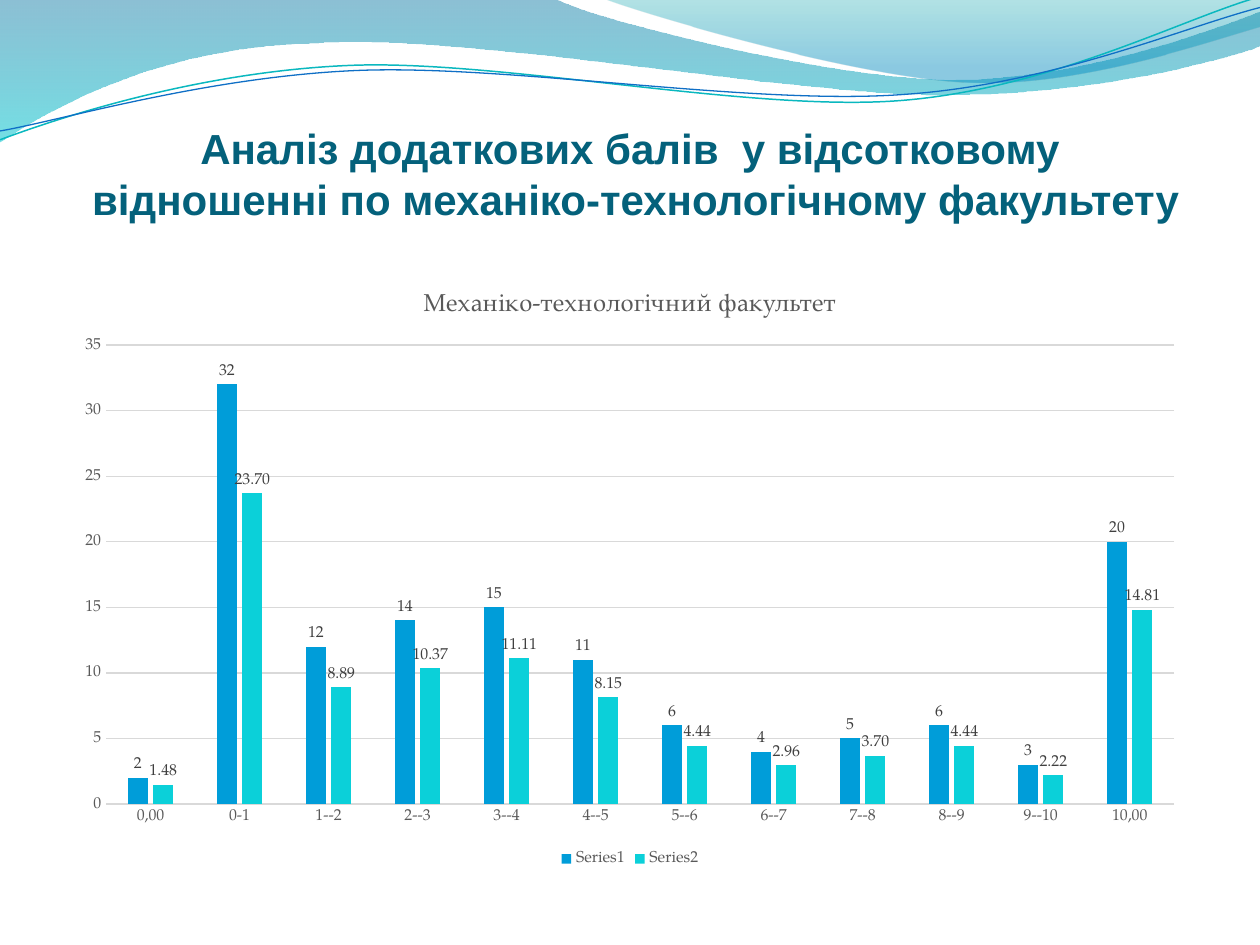
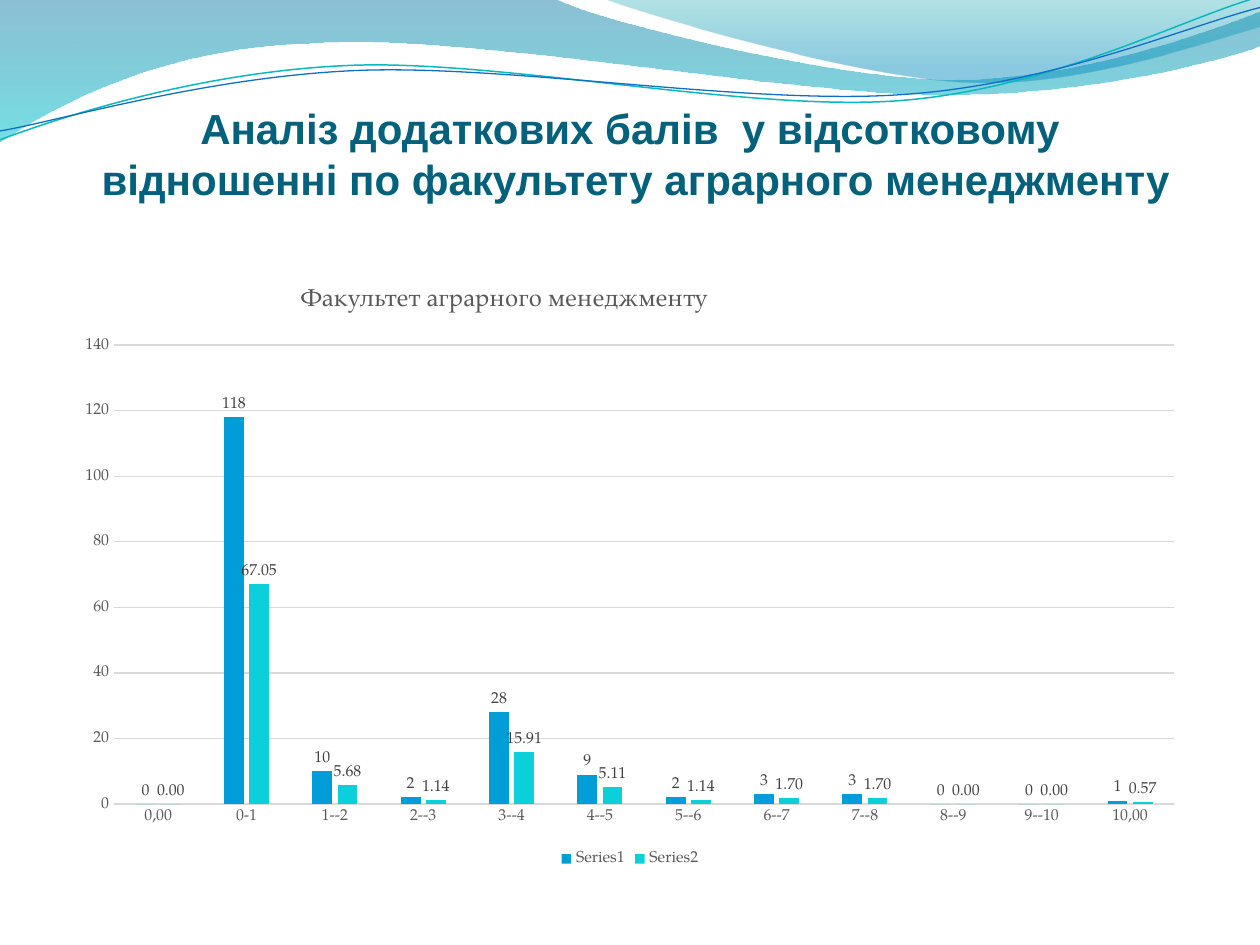
from math import cos, radians, sin

from lxml.etree import SubElement
from pptx import Presentation
from pptx.chart.data import CategoryChartData
from pptx.dml.color import RGBColor
from pptx.enum.chart import XL_CHART_TYPE, XL_LABEL_POSITION, XL_LEGEND_POSITION, XL_TICK_MARK
from pptx.enum.text import MSO_ANCHOR, MSO_AUTO_SIZE, PP_ALIGN
from pptx.oxml import parse_xml
from pptx.oxml.ns import nsdecls, qn
from pptx.util import Inches, Pt

NAVY = RGBColor(0x04, 0x61, 0x7B)
BLUE = RGBColor(0x00, 0x9D, 0xD9)
CYAN = RGBColor(0x0B, 0xD0, 0xD9)
DARK = RGBColor(0x40, 0x40, 0x40)
GREY = RGBColor(0x59, 0x59, 0x59)
PALE = RGBColor(0xD9, 0xD9, 0xD9)
BLACK = RGBColor(0x00, 0x00, 0x00)
STEEL = RGBColor(0x00, 0x74, 0xA1)
AQUA = RGBColor(0x00, 0xC6, 0xCF)
TEAL = RGBColor(0x00, 0xA1, 0xA9)
SKY = RGBColor(0x00, 0x8B, 0xBF)
SEA = RGBColor(0x0A, 0xB8, 0xBF)
ROYAL = RGBColor(0x0F, 0x6F, 0xC6)

SERIF = "TeX Gyre Pagella"
SANS = "Arial"
WIDE, HIGH = Inches(10), Inches(7.5)
EDGE = 0.05
TILT = 2.7
PIVOT = (5, 0.58)

BANDS = [
    ([(0, 0), (4.4, -0.01),
      (4.76, 0.17, 6.64, 0.63, 7.58, 0.63), (8.53, 0.63, 9.58, 0.26, 10, 0.09),
      (10.01, 0.36),
      (9.83, 0.44, 8.7, 0.76, 7.46, 0.75), (6.22, 0.75, 3.82, 0.28, 2.57, 0.34),
      (1.29, 0.36, 0.46, 0.83, -0.01, 1.13), (0, 0)],
     [(0, STEEL, 45), (1, AQUA, 55)]),
    ([(4.79, -0.01),
      (5.09, 0.11, 6.82, 0.62, 7.69, 0.65), (8.56, 0.69, 9.61, 0.32, 10, 0.21),
      (10, 0), (4.79, -0.01)],
     [(0, TEAL, 30), (0.8, SKY, 45)]),
]
LINES = [
    ([(0, 1.11), (0.48, 0.93, 1.58, 0.57, 2.77, 0.52),
      (3.95, 0.47, 5.93, 0.89, 7.13, 0.8), (8.33, 0.71, 9.38, 0.15, 9.98, -0.02)],
     SEA, 0.85),
    ([(0, 1.04), (0.47, 0.96, 1.64, 0.61, 2.83, 0.56),
      (4.03, 0.51, 5.97, 0.84, 7.17, 0.75), (8.36, 0.67, 9.41, 0.21, 10, 0.06)],
     ROYAL, 0.75),
]

CATS = ["0,00", "0-1", *(f"{n}--{n + 1}" for n in range(1, 10)), "10,00"]
HEAD = "Аналіз додаткових балів  у відсотковому"
PAGES = [
    {"tail": " відношенні по механіко-технологічному факультету", "deep": 1.01,
     "name": "Механіко-технологічний факультет", "spot": (31.4, 3),
     "left": 3.8, "top": 35, "unit": 5,
     "count": [2, 32, 12, 14, 15, 11, 6, 4, 5, 6, 3, 20],
     "share": [1.48, 23.7, 8.89, 10.37, 11.11, 8.15, 4.44, 2.96, 3.7, 4.44, 2.22, 14.81]},
    {"tail": " відношенні по факультету аграрного менеджменту", "deep": 0.85,
     "name": "Факультет аграрного менеджменту", "spot": (20.6, 2.3),
     "left": 4.5, "top": 140, "unit": 20,
     "count": [0, 118, 10, 2, 28, 9, 2, 3, 3, 0, 0, 1],
     "share": [0, 67.05, 5.68, 1.14, 15.91, 5.11, 1.14, 1.7, 1.7, 0, 0, 0.57]},
]


def turn(x, y, angle):
    """Turn a point about the pivot of the lines."""
    a, dx, dy = radians(angle), x - PIVOT[0], y - PIVOT[1]
    return (PIVOT[0] + dx * cos(a) - dy * sin(a),
            PIVOT[1] + dx * sin(a) + dy * cos(a))


def outline(slide, steps, close, angle=0):
    """Draw an outline of straight and cubic steps without shadow."""
    steps = [[tuple(Inches(v) for v in turn(*step[i:i + 2], angle))
              for i in range(0, len(step), 2)] for step in steps]
    ends = [step[-1] for step in steps]
    pen = slide.shapes.build_freeform(*ends[0])
    pen.add_line_segments(ends[1:], close=close)
    shape = pen.convert_to_shape()
    shape.shadow.inherit = False
    shape.rotation = -angle % 360
    for leg, step in zip(list(shape._element.iter(qn("a:lnTo"))), steps[1:]):
        if len(step) == 3:
            leg.getparent().replace(leg, bend(step, shape.left, shape.top))
    return shape


def bend(step, left, top):
    """Make one cubic segment."""
    dots = "".join(f'<a:pt x="{x - left}" y="{y - top}"/>' for x, y in step)
    return parse_xml(f'<a:cubicBezTo {nsdecls("a")}>{dots}</a:cubicBezTo>')


def band(slide, steps, stops):
    """Draw a wave with a see-through downward gradient."""
    shape = outline(slide, steps, True)
    shape.line.fill.background()
    shape.fill.gradient()
    shape.fill.gradient_angle = 270
    for stop, (place, color, alpha) in zip(shape.fill.gradient_stops, stops):
        stop.position = place
        stop.color.rgb = color
        tint = stop._gs.find(qn("a:srgbClr"))
        SubElement(tint, qn("a:alpha")).set("val", str(alpha * 1000))
    return shape


def curve(slide, steps, color, width):
    """Draw a thin open curve."""
    shape = outline(slide, steps, False, TILT)
    shape.fill.background()
    shape.line.color.rgb = color
    shape.line.width = Pt(width)
    return shape


def adorn(layout, slide):
    """Draw the waves and move them to the shared layout."""
    for hold in list(layout.placeholders):
        if hold.placeholder_format.idx:
            hold._element.getparent().remove(hold._element)
    waves = [band(slide, *item) for item in BANDS]
    waves += [curve(slide, *item) for item in LINES]
    for spot, wave in enumerate(waves, 2):
        layout.shapes._spTree.insert(spot, wave._element)


def style(font, size, color, face=SERIF, bold=False):
    """Set the look of a font."""
    font.size, font.name, font.bold = Pt(size), face, bold
    font.color.rgb = color


def heading(slide, tail, deep):
    """Fill and place the two-line title."""
    title = slide.shapes.title
    title.left, title.top = int(WIDE * EDGE), Inches(0.77)
    title.width, title.height = int(WIDE * (1 - 2 * EDGE)), Inches(deep)
    frame = title.text_frame
    frame.auto_size, frame.word_wrap = MSO_AUTO_SIZE.NONE, True
    frame.vertical_anchor = MSO_ANCHOR.BOTTOM
    frame.margin_left = frame.margin_right = frame.margin_bottom = 0
    frame.margin_top = Inches(0.05)
    para = frame.paragraphs[0]
    para.alignment = PP_ALIGN.CENTER
    para.line_spacing = 1.02
    for text in (HEAD, tail):
        if para.runs:
            para.add_line_break()
        run = para.add_run()
        run.text = text
        style(run.font, 24, NAVY, SANS, True)


def place(node, spot, inner=False, **share):
    """Fix a chart part at percentages of the chart's size."""
    for old in node.findall(qn("c:layout")):
        node.remove(old)
    target = '<c:layoutTarget val="inner"/>' if inner else ""
    modes = "".join(f'<c:{k}Mode val="edge"/>' for k in "xy")
    sizes = "".join(f'<c:{k} val="{v / 100:.3f}"/>' for k, v in share.items())
    node.insert(spot, parse_xml(
        f'<c:layout {nsdecls("c")}><c:manualLayout>{target}{modes}{sizes}'
        "</c:manualLayout></c:layout>"))


def axes(chart, top, unit):
    """Style both axes and the grid."""
    for axis in (chart.category_axis, chart.value_axis):
        axis.major_tick_mark = axis.minor_tick_mark = XL_TICK_MARK.NONE
        style(axis.tick_labels.font, 9, GREY)
    value = chart.value_axis
    value.minimum_scale, value.maximum_scale, value.major_unit = 0, top, unit
    value.has_major_gridlines = True
    value.format.line.fill.background()
    for part in (chart.category_axis, value.major_gridlines):
        part.format.line.color.rgb = PALE
        part.format.line.width = Pt(0.75)


def bars(chart):
    """Colour the unnamed columns and show their values."""
    plot = chart.plots[0]
    plot.gap_width, plot.overlap, plot.vary_by_categories = 219, -27, False
    for row, color, code in zip(plot.series, (BLUE, CYAN), ("General", "0.00")):
        for name in row._element.findall(qn("c:tx")):
            row._element.remove(name)
        row.format.fill.solid()
        row.format.fill.fore_color.rgb = color
        labels = row.data_labels
        labels.show_value = True
        labels.number_format, labels.number_format_is_linked = code, False
        labels.position = XL_LABEL_POSITION.OUTSIDE_END
        style(labels.font, 9, DARK)


def graph(slide, page):
    """Add the column chart of one faculty."""
    data = CategoryChartData()
    data.categories = CATS
    for key in ("count", "share"):
        data.add_series("", page[key])
    chart = slide.shapes.add_chart(
        XL_CHART_TYPE.COLUMN_CLUSTERED, int(WIDE * EDGE), Inches(2.12),
        int(WIDE * (1 - 2 * EDGE)), int(HIGH * 0.64), data).chart
    style(chart.font, 10, BLACK)
    chart.has_title = True
    run = chart.chart_title.text_frame.paragraphs[0].add_run()
    run.text = page["name"]
    style(run.font, 14, GREY)
    chart.has_legend = True
    chart.legend.position = XL_LEGEND_POSITION.BOTTOM
    chart.legend.include_in_layout = False
    style(chart.legend.font, 9, GREY)
    axes(chart, page["top"], page["unit"])
    bars(chart)
    x, y = page["spot"]
    place(chart.chart_title._element, 1, x=x, y=y)
    place(chart._chartSpace.chart.plotArea, 0, True, x=page["left"], y=12.9,
          w=98 - page["left"], h=75.9)


def main():
    """Build the deck."""
    deck = Presentation()
    deck.slide_width, deck.slide_height = WIDE, HIGH
    layout = deck.slide_layouts[5]
    for page in PAGES:
        slide = deck.slides.add_slide(layout)
        if page is PAGES[0]:
            adorn(layout, slide)
        heading(slide, page["tail"], page["deep"])
        graph(slide, page)
    deck.save("out.pptx")


if __name__ == "__main__":
    main()
